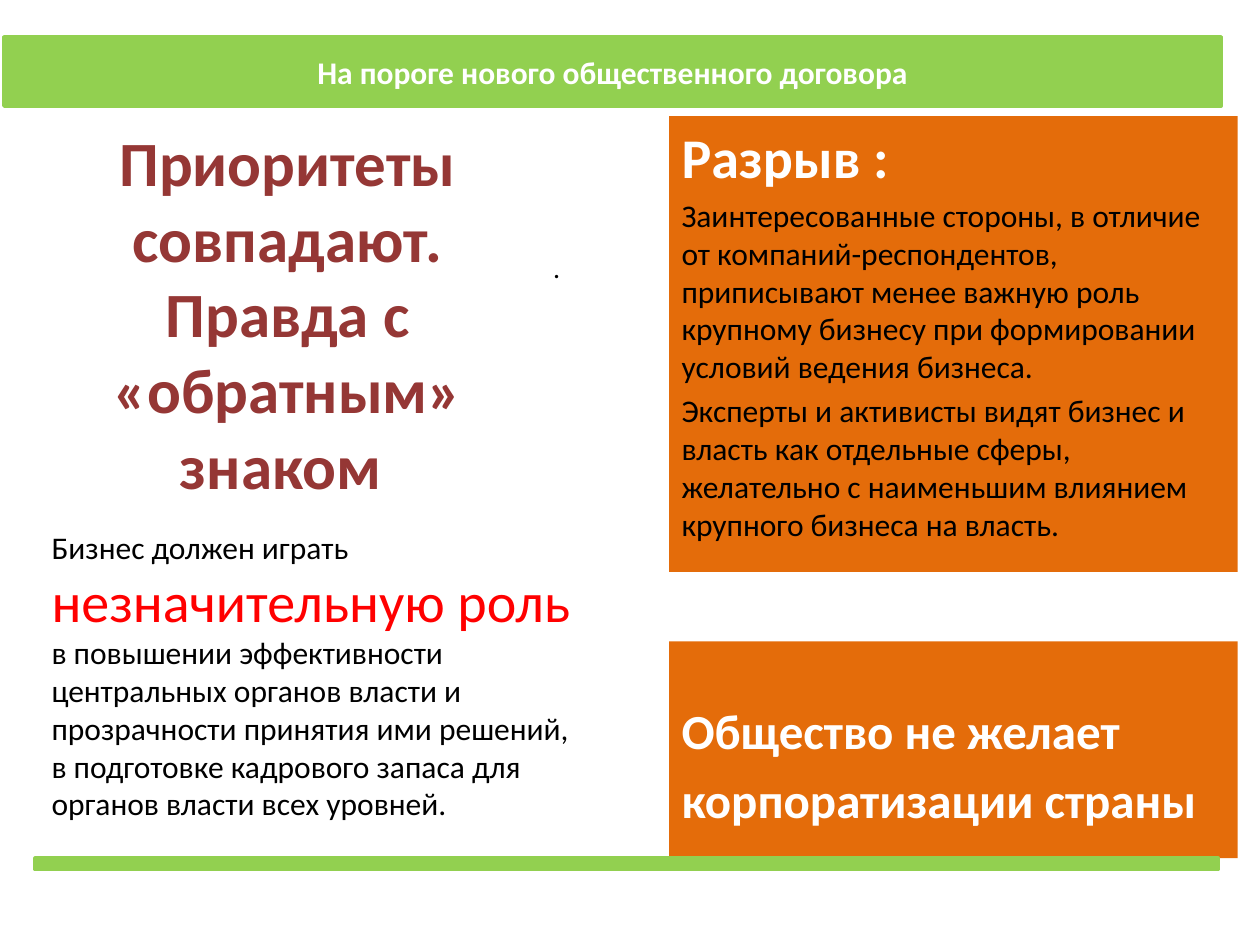
from dataclasses import dataclass

from pptx import Presentation
from pptx.dml.color import RGBColor
from pptx.enum.shapes import MSO_SHAPE
from pptx.enum.text import MSO_ANCHOR, PP_ALIGN
from pptx.util import Cm, Pt

RECTANGLE = MSO_SHAPE.RECTANGLE
TOP, MIDDLE = MSO_ANCHOR.TOP, MSO_ANCHOR.MIDDLE
LEFT, CENTER = PP_ALIGN.LEFT, PP_ALIGN.CENTER


@dataclass(frozen=True)
class Theme:
    font: str = "Calibri"
    green: str = "92D050"
    orange: str = "E46C0A"
    maroon: str = "953735"
    red: str = "FF0000"
    white: str = "FFFFFF"
    black: str = "000000"
    title: int = 36
    heading: int = 32
    conclusion: int = 28
    body: int = 18
    small: int = 16
    border: int = 2
    spacing: float = 0.2


THEME = Theme()


def color(value):
    return RGBColor.from_string(value)


def write_text(shape, paragraphs, anchor=TOP, alignment=LEFT, top_margin=0.13):
    frame = shape.text_frame
    frame.word_wrap = True
    frame.vertical_anchor = anchor
    frame.margin_top = Cm(top_margin)
    for index, runs in enumerate(paragraphs):
        paragraph = frame.paragraphs[0] if index == 0 else frame.add_paragraph()
        paragraph.alignment = alignment
        if index:
            paragraph.space_before = Pt(round(runs[0][1] * THEME.spacing, 1))
        for text, size, text_color, bold in runs:
            run = paragraph.add_run()
            run.text = text
            run.font.name = THEME.font
            run.font.size = Pt(size)
            run.font.bold = bold
            run.font.color.rgb = color(text_color)


def add_text(slide, box, paragraphs, **options):
    shape = slide.shapes.add_textbox(*map(Cm, box))
    write_text(shape, paragraphs, **options)


def add_rectangle(slide, box, fill, outlined=False):
    shape = slide.shapes.add_shape(RECTANGLE, *map(Cm, box))
    shape.shadow.inherit = False
    shape.fill.solid()
    shape.fill.fore_color.rgb = color(fill)
    if outlined:
        shape.line.color.rgb = color(fill)
        shape.line.width = Pt(THEME.border)
    else:
        shape.line.fill.background()
    return shape


def add_panel(slide, top, height, paragraphs, **options):
    panel = add_rectangle(slide, (13.49, top, 11.46, height), THEME.orange)
    write_text(panel, paragraphs, **options)


def main():
    presentation = Presentation()
    presentation.slide_width = Cm(25.4)
    presentation.slide_height = Cm(19.05)
    slide = presentation.slides.add_slide(presentation.slide_layouts[6])

    add_text(
        slide, (1.7, 2.5, 8.2, 7.6),
        [[("Приоритеты совпадают. Правда с «обратным» знаком ",
           THEME.title, THEME.maroon, True)]],
        anchor=MIDDLE, alignment=CENTER)
    add_text(slide, (10.9, 4.93, 5.79, 4.39),
             [[(".", THEME.small, THEME.black, False)]])

    header = add_rectangle(slide, (0.08, 0.74, 24.54, 1.4), THEME.green, True)
    write_text(
        header,
        [[("На пороге нового общественного договора",
           THEME.body, THEME.white, True)]],
        anchor=MIDDLE, alignment=CENTER)

    add_panel(slide, 2.34, 9.19, [
        [("Разрыв :", THEME.heading, THEME.white, True)],
        [("Заинтересованные стороны, в отличие от компаний-респондентов, "
          "приписывают менее важную роль крупному бизнесу при формировании "
          "условий ведения бизнеса.", THEME.body, THEME.black, False)],
        [("Эксперты и активисты видят бизнес и власть как отдельные сферы, "
          "желательно с наименьшим влиянием крупного бизнеса на власть.",
          THEME.body, THEME.black, False)],
    ])
    add_text(slide, (0.79, 10.52, 11.13, 5.21), [[
        ("Бизнес должен играть ", THEME.body, THEME.black, False),
        ("незначительную роль ", THEME.heading, THEME.red, False),
        ("в повышении эффективности центральных органов власти и "
         "прозрачности принятия ими решений, в подготовке кадрового запаса "
         "для органов власти всех уровней.", THEME.body, THEME.black, False),
    ]])
    add_panel(slide, 12.93, 4.37, [
        [(line, THEME.conclusion, THEME.white, True)]
        for line in ("Общество не желает", "корпоратизации страны")
    ], top_margin=1.2)
    add_rectangle(slide, (0.71, 17.3, 23.85, 0.23), THEME.green, True)

    presentation.save("out.pptx")


if __name__ == "__main__":
    main()
